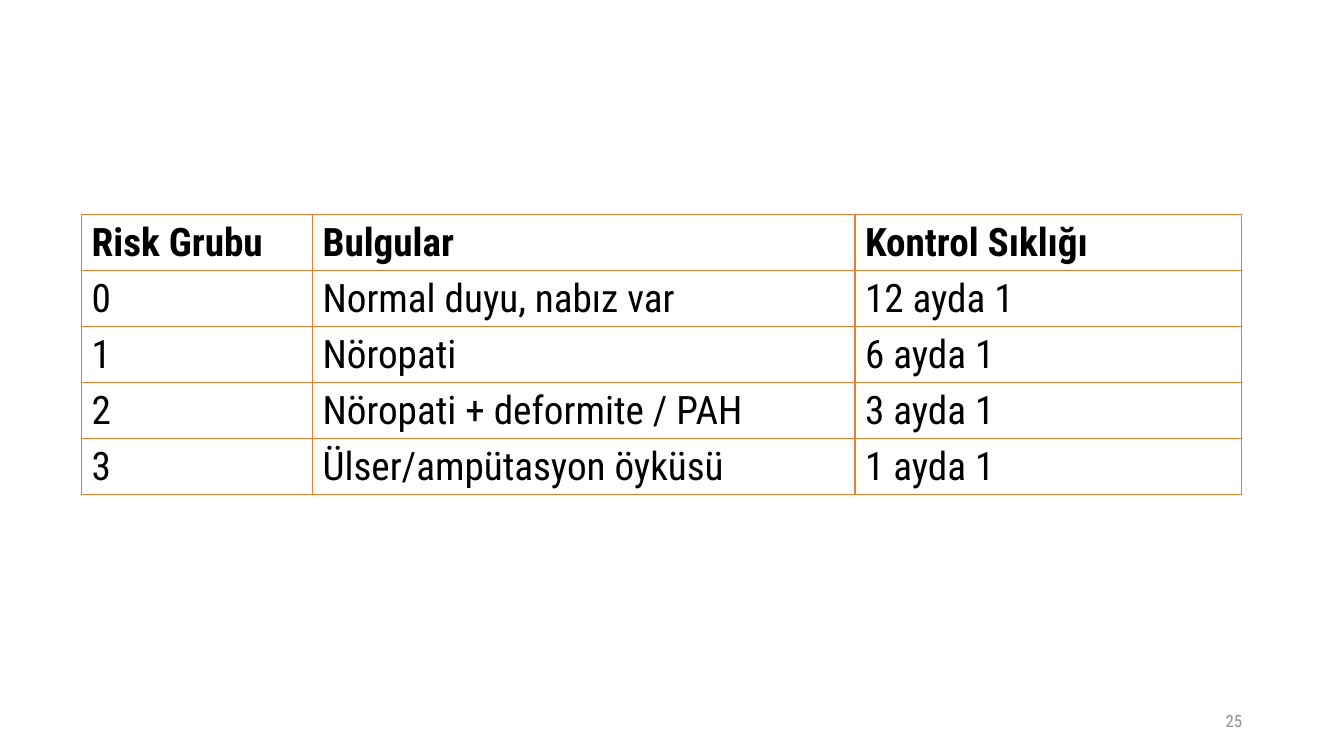
from lxml import etree
from pptx import Presentation
from pptx.dml.color import RGBColor
from pptx.enum.text import MSO_ANCHOR as Anchor, PP_ALIGN as Align
from pptx.oxml.ns import qn
from pptx.util import Inches, Pt

FONT = "Roboto Condensed"
BORDER = "ED7D31"


def style(paragraph, size, color, bold=False):
    for run in paragraph.runs:
        run.font.name = FONT
        run.font.size = Pt(size)
        run.font.bold = bold
        run.font.color.rgb = RGBColor.from_string(color)


def add_borders(cell):
    properties = cell._tc.get_or_add_tcPr()
    for side in ("a:lnL", "a:lnR", "a:lnT", "a:lnB"):
        line = etree.SubElement(properties, qn(side), w=str(Pt(1)))
        fill = etree.SubElement(line, qn("a:solidFill"))
        etree.SubElement(fill, qn("a:srgbClr"), val=BORDER)


prs = Presentation()
prs.slide_width = Inches(13.33)
prs.slide_height = Inches(7.5)
slide = prs.slides.add_slide(prs.slide_layouts[6])

# Risk groups and how often each is checked
risk_rows = [
    ("Risk Grubu", "Bulgular", "Kontrol Sıklığı"),
    ("0", "Normal duyu, nabız var", "12 ayda 1"),
    ("1", "Nöropati", "6 ayda 1"),
    ("2", "Nöropati + deformite / PAH", "3 ayda 1"),
    ("3", "Ülser/ampütasyon öyküsü", "1 ayda 1"),
]
column_widths = [2.29, 5.38, 3.83]
row_height = 0.55
risk_table = slide.shapes.add_table(
    len(risk_rows), len(column_widths), Inches(0.81), Inches(2.13),
    Inches(sum(column_widths)), Inches(row_height * len(risk_rows))).table
risk_table.horz_banding = False

for column, width in zip(risk_table.columns, column_widths):
    column.width = Inches(width)

for r, entries in enumerate(risk_rows):
    risk_table.rows[r].height = Inches(row_height)
    for c, entry in enumerate(entries):
        cell = risk_table.cell(r, c)
        cell.text_frame.text = entry
        cell.vertical_anchor = Anchor.MIDDLE
        style(cell.text_frame.paragraphs[0], 28, "000000", bold=r == 0)
        add_borders(cell)
        cell.fill.background()

# Slide number
page_number = slide.shapes.add_textbox(
    Inches(9.42), Inches(6.95), Inches(3), Inches(0.4)).text_frame
page_number.word_wrap = True
page_number.vertical_anchor = Anchor.MIDDLE
page_number.text = "25"
page_number.paragraphs[0].alignment = Align.RIGHT
style(page_number.paragraphs[0], 12, "8C8C8C")

prs.save("out.pptx")
